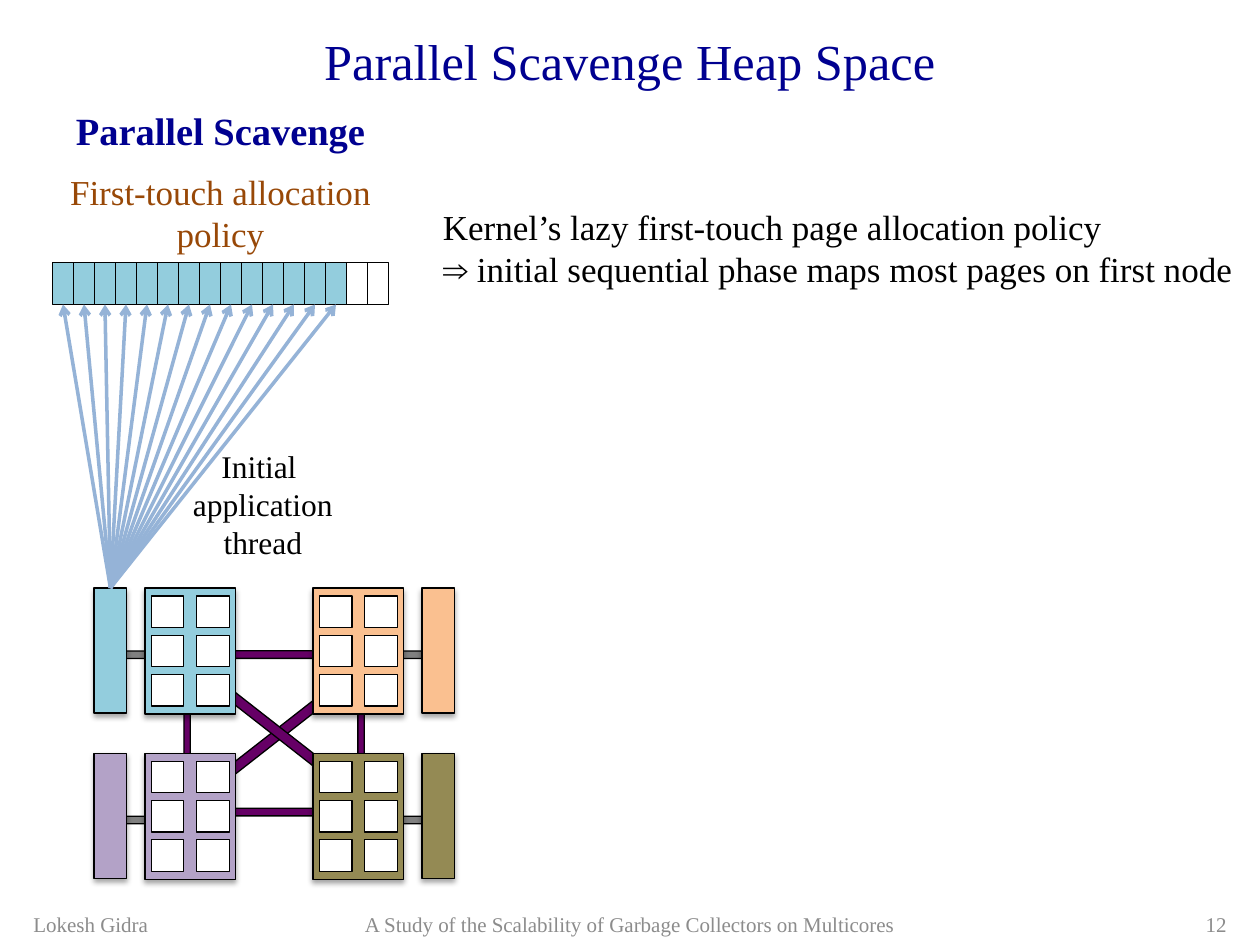
from lxml import etree
from pptx import Presentation
from pptx.dml.color import RGBColor
from pptx.enum.shapes import MSO_CONNECTOR, MSO_SHAPE
from pptx.enum.text import MSO_ANCHOR, PP_ALIGN
from pptx.oxml import parse_xml
from pptx.oxml.ns import qn
from pptx.util import Inches, Pt

RECT, CAN, STRAIGHT = MSO_SHAPE.RECTANGLE, MSO_SHAPE.CAN, MSO_CONNECTOR.STRAIGHT
LEFT, CENTER, RIGHT = PP_ALIGN.LEFT, PP_ALIGN.CENTER, PP_ALIGN.RIGHT
TOP, MIDDLE = MSO_ANCHOR.TOP, MSO_ANCHOR.MIDDLE

NAVY = RGBColor(0x00, 0x00, 0x90)
BROWN = RGBColor(0x98, 0x48, 0x07)
BLACK = RGBColor(0x00, 0x00, 0x00)
WHITE = RGBColor(0xFF, 0xFF, 0xFF)
FOOTER_GRAY = RGBColor(0x8C, 0x8C, 0x8C)
BUS_GRAY = RGBColor(0x80, 0x80, 0x80)
PURPLE = RGBColor(0x66, 0x00, 0x66)
ARROW_BLUE = RGBColor(0x95, 0xB3, 0xD7)
AQUA = RGBColor(0x93, 0xCD, 0xDD)
ORANGE = RGBColor(0xFA, 0xC0, 0x90)
LILAC = RGBColor(0xB3, 0xA2, 0xC7)
OLIVE = RGBColor(0x94, 0x8A, 0x54)

SHADOW = (
    '<a:outerShdw xmlns:a="http://schemas.openxmlformats.org/drawingml/2006/main"'
    ' blurRad="39370" dist="22860" dir="5400000" rotWithShape="0">'
    '<a:srgbClr val="000000"><a:alpha val="35000"/></a:srgbClr></a:outerShdw>'
)

deck = Presentation()
deck.slide_width, deck.slide_height = Inches(10), Inches(7.5)
page = deck.slides.add_slide(deck.slide_layouts[6])

# The slide is a grid of 60 columns by 45 rows of square units
UNIT = deck.slide_width / 60


def add_block(kind, place, fill, turn=0, shadow=False):
    block = page.shapes.add_shape(kind, *(round(n * UNIT) for n in place))
    block.rotation = turn
    block.shadow.inherit = False
    if shadow:
        block._element.spPr.find(qn("a:effectLst")).append(parse_xml(SHADOW))
    block.fill.solid()
    block.fill.fore_color.rgb = fill
    block.line.color.rgb = BLACK
    block.line.width = Pt(0.75)
    return block


def add_text(place, lines, align, anchor, wrap, **font):
    box = page.shapes.add_textbox(*(round(n * UNIT) for n in place))
    box.text_frame.word_wrap = wrap
    box.text_frame.vertical_anchor = anchor
    for i, line in enumerate(lines):
        para = box.text_frame.paragraphs[0] if i == 0 else box.text_frame.add_paragraph()
        para.alignment = align
        span = para.add_run()
        span.text = line
        span.font.name = "Times New Roman"
        span.font.color.rgb = font["color"]
        for name, value in font.items():
            if name != "color":
                setattr(span.font, name, value)


# Title and footer
add_text((1, 1, 58, 3.75), ["Parallel Scavenge Heap Space"], CENTER, MIDDLE, True,
         size=Pt(28.8), color=NAVY)
for column, width, words, align in (
    (1, 14, "Lokesh Gidra", LEFT),
    (15, 30, "A Study of the Scalability of Garbage Collectors on Multicores", CENTER),
    (45, 14, "12", RIGHT),
):
    add_text((column, 43, width, 2), [words], align, MIDDLE, True,
             size=Pt(12), color=FOOTER_GRAY)

# Heap pages: the first 14 of 16 are mapped
MAPPED = 14
heap = [add_block(RECT, (2.5 + i, 12.5, 1, 2), AQUA if i < MAPPED else WHITE)
        for i in range(16)]

# Links between the nodes
for *place, turn in (
    (12.96, 29.9, 0.48, 10.2, 52),
    (12.84, 29.64, 0.48, 10.2, 308),
    (13, 36.36, 0.36, 4.62, 270),
    (17.04, 33.6, 0.3, 3.36, 0),
    (8.76, 33.24, 0.3, 3.36, 0),
    (13, 28.86, 0.36, 4.62, 270),
):
    add_block(CAN, place, PURPLE, turn)

# Four nodes: bus, socket with six cores, memory bank
SIDES = ((6.9, 6.24, 4.48), (14.9, 19.5, 20.1))
banks = []
for row, colors in enumerate(((AQUA, ORANGE), (LILAC, OLIVE))):
    top = 28 + 7.87 * row
    for (socket_x, bus_x, bank_x), color in zip(SIDES, colors):
        add_block(CAN, (bus_x, top + 2.1, 0.36, 2.16), BUS_GRAY, 270)
        add_block(RECT, (socket_x, top, 4.32, 6), color, shadow=True)
        for core in range(6):
            add_block(RECT, (socket_x + 0.3 + 2.16 * (core % 2),
                             top + 0.38 + 1.87 * (core // 2), 1.56, 1.5), WHITE)
        banks.append(add_block(RECT, (bank_x, top, 1.56, 5.95), color, shadow=True))

# Explanation
add_text((20.5, 9.5, 39.6, 4.6),
         ["Kernel’s lazy first-touch page allocation policy",
          "⇒ initial sequential phase maps most pages on first node"],
         LEFT, TOP, False, size=Pt(20), color=BLACK)

# Arrows from the first memory bank to every mapped page
for heap_page in heap[:MAPPED]:
    arrow = page.shapes.add_connector(STRAIGHT, 0, 0, 0, 0)
    arrow.begin_connect(banks[0], 0)
    arrow.end_connect(heap_page, 2)
    arrow.line.color.rgb = ARROW_BLUE
    arrow.line.width = Pt(2)
    etree.SubElement(arrow.line._get_or_add_ln(), qn("a:tailEnd"), type="arrow")
    etree.SubElement(arrow._element.spPr, qn("a:effectLst"))

# Thread squiggle, sampled from three Bezier curves
KNOTS = [(1.28, 3.75), (1.22, 3.81), (1.17, 3.87), (1.19, 3.94), (1.21, 4.01),
         (1.39, 4.08), (1.4, 4.17), (1.42, 4.25), (1.27, 4.46), (1.27, 4.46)]
STEPS = 12
points = []
for start in range(0, 9, 3):
    for step in range(1, STEPS + 1):
        t = step / STEPS
        weights = ((1 - t) ** 3, 3 * t * (1 - t) ** 2, 3 * t * t * (1 - t), t ** 3)
        points.append([sum(w * knot[axis] for w, knot in zip(weights, KNOTS[start:start + 4]))
                       for axis in (0, 1)])
builder = page.shapes.build_freeform(*KNOTS[0], scale=Inches(1))
builder.add_line_segments(points, close=False)
thread = builder.convert_to_shape()
thread.shadow.inherit = False
thread.fill.background()
thread.line.color.rgb = BLACK
thread.line.width = Pt(2)

# Labels
add_text((8.5, 21, 8.04, 6.06), ["Initial ", "application ", "thread"], CENTER, TOP, False,
         size=Pt(18), color=BLACK)
add_text((2.5, 8, 16, 4.25), ["First-touch allocation policy"], CENTER, MIDDLE, True,
         size=Pt(20), color=BROWN)
add_text((2.5, 5, 16, 2.4), ["Parallel Scavenge"], CENTER, MIDDLE, True,
         size=Pt(22), color=NAVY, bold=True)

deck.save("out.pptx")
